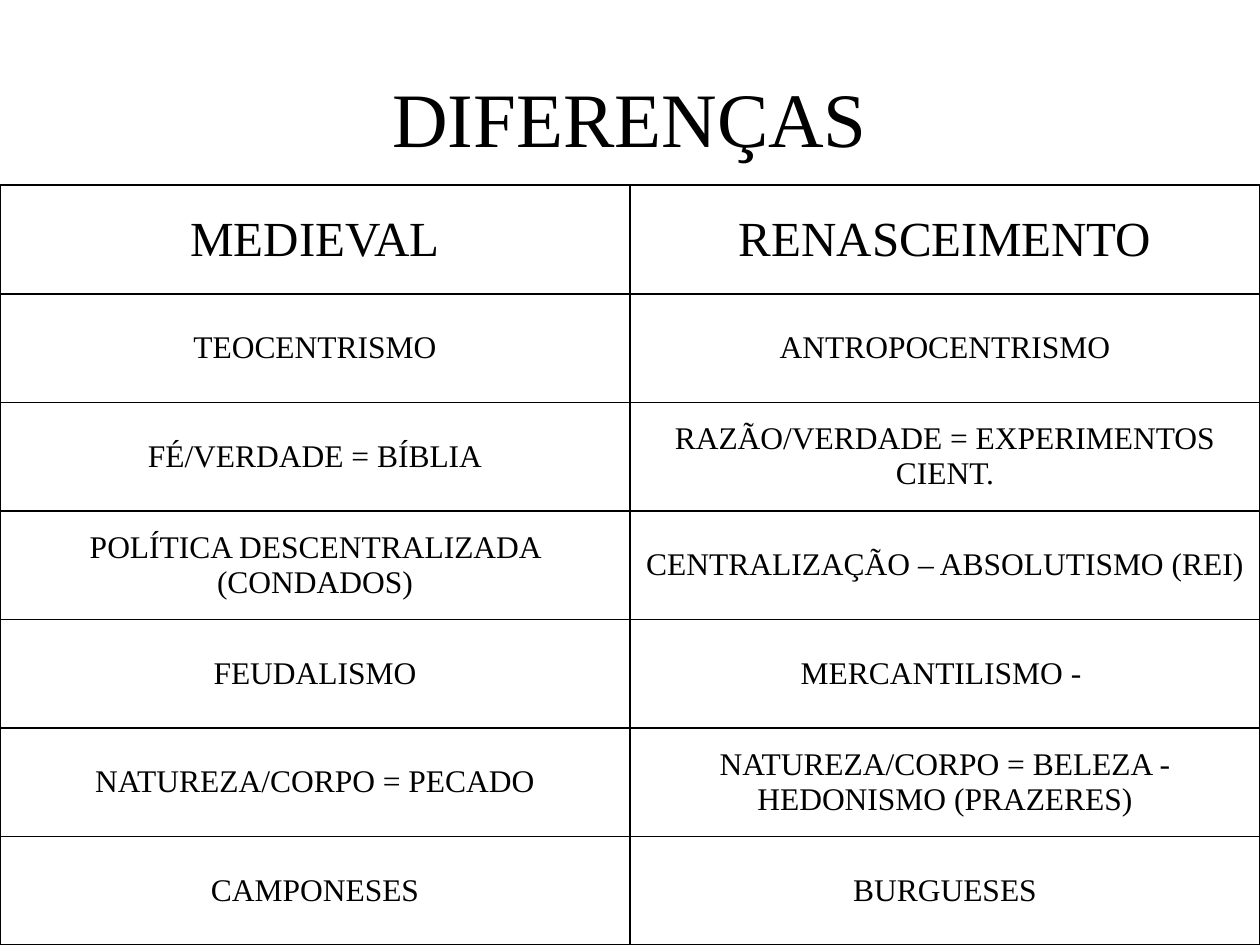
import dataclasses

import lxml.etree
import pptx
import pptx.dml.color
import pptx.enum.text
import pptx.oxml.ns
import pptx.util


@dataclasses.dataclass(frozen=True)
class Theme:
    font: str = "Times New Roman"
    ink: str = "000000"
    paper: str = "FFFFFF"
    title: int = 44
    header: int = 28
    body: int = 18
    border: int = 1


THEME = Theme()
WIDTH = pptx.util.Inches(10)
HEIGHT = pptx.util.Inches(7.5)
TABLE_TOP = pptx.util.Inches(1.47)

COMPARISON = [
    ("MEDIEVAL", "RENASCEIMENTO"),
    ("TEOCENTRISMO", "ANTROPOCENTRISMO"),
    ("FÉ/VERDADE = BÍBLIA", "RAZÃO/VERDADE = EXPERIMENTOS CIENT."),
    ("POLÍTICA DESCENTRALIZADA (CONDADOS)", "CENTRALIZAÇÃO – ABSOLUTISMO (REI)"),
    ("FEUDALISMO", "MERCANTILISMO - "),
    ("NATUREZA/CORPO = PECADO", "NATUREZA/CORPO = BELEZA - HEDONISMO (PRAZERES)"),
    ("CAMPONESES", "BURGUESES"),
]


def rgb(color):
    return pptx.dml.color.RGBColor.from_string(color)


def write_centred(tf, text, size):
    p = tf.paragraphs[0]
    p.text = text
    p.alignment = pptx.enum.text.PP_ALIGN.CENTER
    p.font.name = THEME.font
    p.font.size = pptx.util.Pt(size)
    p.font.color.rgb = rgb(THEME.ink)


def add_title(slide, text):
    left, top = round(WIDTH * 0.05), round(HEIGHT * 0.04)
    sp = slide.shapes.add_textbox(left, top, WIDTH - 2 * left, pptx.util.Inches(1.25))
    tf = sp.text_frame
    tf.word_wrap = True
    tf.vertical_anchor = pptx.enum.text.MSO_ANCHOR.MIDDLE
    write_centred(tf, text, THEME.title)


def set_borders(cell):
    qn = pptx.oxml.ns.qn
    tc_pr = cell._tc.get_or_add_tcPr()
    for i, side in enumerate(("lnL", "lnR", "lnT", "lnB")):
        ln = lxml.etree.Element(qn(f"a:{side}"), w=str(pptx.util.Pt(THEME.border)))
        fill = lxml.etree.SubElement(ln, qn("a:solidFill"))
        lxml.etree.SubElement(fill, qn("a:srgbClr"), val=THEME.ink)
        tc_pr.insert(i, ln)


def add_comparison(slide, rows):
    n_rows, n_cols = len(rows), len(rows[0])
    frame = slide.shapes.add_table(
        n_rows, n_cols, 0, TABLE_TOP, WIDTH, HEIGHT - TABLE_TOP
    )
    table = frame.table
    for r, texts in enumerate(rows):
        size = THEME.body if r else THEME.header
        for c, text in enumerate(texts):
            cell = table.cell(r, c)
            cell.fill.solid()
            cell.fill.fore_color.rgb = rgb(THEME.paper)
            cell.vertical_anchor = pptx.enum.text.MSO_ANCHOR.MIDDLE
            write_centred(cell.text_frame, text, size)
            set_borders(cell)


def main():
    prs = pptx.Presentation()
    prs.slide_width, prs.slide_height = WIDTH, HEIGHT
    slide = prs.slides.add_slide(prs.slide_layouts[6])
    add_title(slide, "DIFERENÇAS")
    add_comparison(slide, COMPARISON)
    prs.save("out.pptx")


if __name__ == "__main__":
    main()
